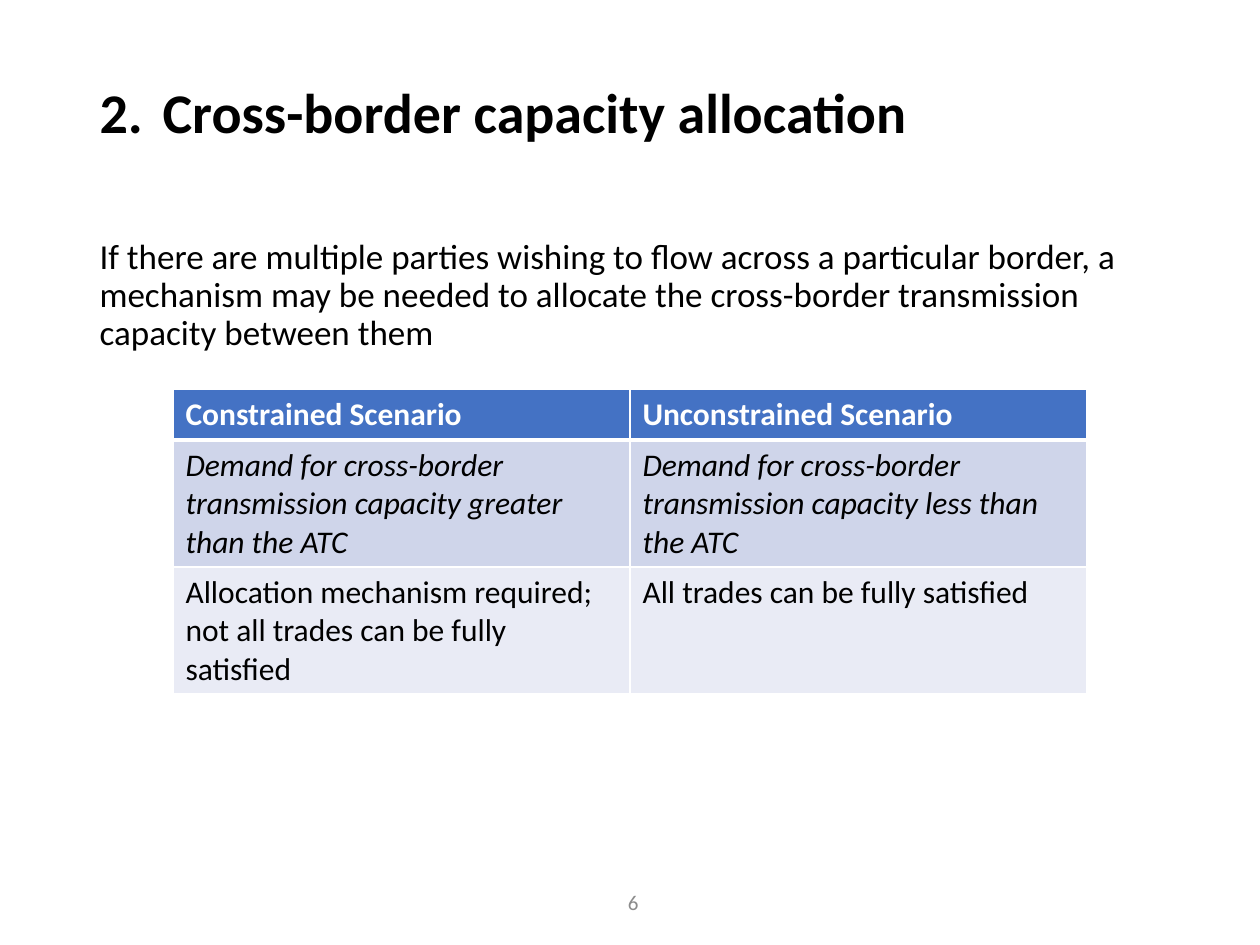
from dataclasses import dataclass

from lxml.etree import SubElement
from pptx import Presentation
from pptx.dml.color import RGBColor
from pptx.enum.text import MSO_ANCHOR as Anchor, MSO_AUTO_SIZE as AutoSize, PP_ALIGN as Align
from pptx.oxml.ns import qn
from pptx.util import Emu, Pt

EMU_PER_PX = 914400 / 126


@dataclass(frozen=True)
class Theme:
    font: str = "Calibri"
    ink: str = "000000"
    white: str = "FFFFFF"
    muted: str = "8C8C8C"
    header: str = "4472C4"
    dark_band: str = "CFD5EA"
    light_band: str = "E9EBF5"
    title_size: int = 32
    body_size: int = 20
    table_size: int = 18
    number_size: int = 12


@dataclass(frozen=True)
class Box:
    left: int
    top: int
    width: int
    height: int


@dataclass(frozen=True)
class TableRow:
    texts: tuple[str, str]
    height: int
    fill: str
    color: str
    bold: bool = False
    italic: bool = False
    top_border: int = 1
    bottom_border: int = 1


THEME = Theme()

ROWS = [
    TableRow(("Constrained Scenario", "Unconstrained Scenario"), 51,
             THEME.header, THEME.white, bold=True, bottom_border=3),
    TableRow(("Demand for cross-border transmission capacity greater than the ATC",
              "Demand for cross-border transmission capacity less than the ATC"), 127,
             THEME.dark_band, THEME.ink, italic=True, top_border=3),
    TableRow(("Allocation mechanism required; not all trades can be fully satisfied",
              "All trades can be fully satisfied"), 127,
             THEME.light_band, THEME.ink),
]


def px(length: int) -> Emu:
    return Emu(round(length * EMU_PER_PX))


def edges(box: Box) -> tuple[Emu, Emu, Emu, Emu]:
    return px(box.left), px(box.top), px(box.width), px(box.height)


def write_text(frame, text: str, *, size: int, color: str = THEME.ink, bold: bool = False,
               italic: bool = False, align=Align.LEFT, anchor=Anchor.TOP,
               line_spacing: float = 1.0) -> None:
    frame.word_wrap = True
    frame.vertical_anchor = anchor
    paragraph = frame.paragraphs[0]
    paragraph.alignment = align
    paragraph.line_spacing = line_spacing
    paragraph.space_before = Pt(0)
    run = paragraph.add_run()
    run.text = text
    font = run.font
    font.name, font.size = THEME.font, Pt(size)
    font.bold, font.italic = bold, italic
    font.color.rgb = RGBColor.from_string(color)


def fill_placeholder(shape, box: Box, text: str, size: int, bold: bool = False) -> None:
    shape.left, shape.top, shape.width, shape.height = edges(box)
    frame = shape.text_frame
    frame.auto_size = AutoSize.NONE
    properties = frame.paragraphs[0]._p.get_or_add_pPr()
    properties.set("marL", "0")
    properties.set("indent", "0")
    SubElement(properties, qn("a:buNone"))
    write_text(frame, text, size=size, bold=bold, line_spacing=0.9)


def set_borders(cell, row: TableRow) -> None:
    properties = cell._tc.get_or_add_tcPr()
    widths = {"lnL": 1, "lnR": 1, "lnT": row.top_border, "lnB": row.bottom_border}
    for side, width in widths.items():
        line = SubElement(properties, qn(f"a:{side}"), w=str(Pt(width)))
        fill = SubElement(line, qn("a:solidFill"))
        SubElement(fill, qn("a:srgbClr"), val=THEME.white)


def add_scenario_table(slide, left: int, top: int, column_width: int) -> None:
    column_count = len(ROWS[0].texts)
    box = Box(left, top, column_width * column_count, sum(row.height for row in ROWS))
    table = slide.shapes.add_table(len(ROWS), column_count, *edges(box)).table
    for column in table.columns:
        column.width = px(column_width)
    for row_index, row in enumerate(ROWS):
        table.rows[row_index].height = px(row.height)
        for column_index, text in enumerate(row.texts):
            cell = table.cell(row_index, column_index)
            set_borders(cell, row)
            cell.fill.solid()
            cell.fill.fore_color.rgb = RGBColor.from_string(row.fill)
            write_text(cell.text_frame, text, size=THEME.table_size, color=row.color,
                       bold=row.bold, italic=row.italic)


def main() -> None:
    presentation = Presentation()
    presentation.slide_width, presentation.slide_height = px(1260), px(945)
    slide = presentation.slides.add_slide(presentation.slide_layouts[1])
    fill_placeholder(slide.shapes.title, Box(87, 79, 1086, 129),
                     "2.\tCross-border capacity allocation", THEME.title_size, bold=True)
    fill_placeholder(slide.placeholders[1], Box(87, 233, 1086, 604),
                     "If there are multiple parties wishing to flow across a particular border, "
                     "a mechanism may be needed to allocate the cross-border transmission "
                     "capacity between them", THEME.body_size)
    number = slide.shapes.add_textbox(*edges(Box(368, 877, 283, 50)))
    write_text(number.text_frame, "6", size=THEME.number_size, color=THEME.muted,
               align=Align.RIGHT, anchor=Anchor.MIDDLE)
    add_scenario_table(slide, left=173, top=389, column_width=457)
    presentation.save("out.pptx")


if __name__ == "__main__":
    main()
